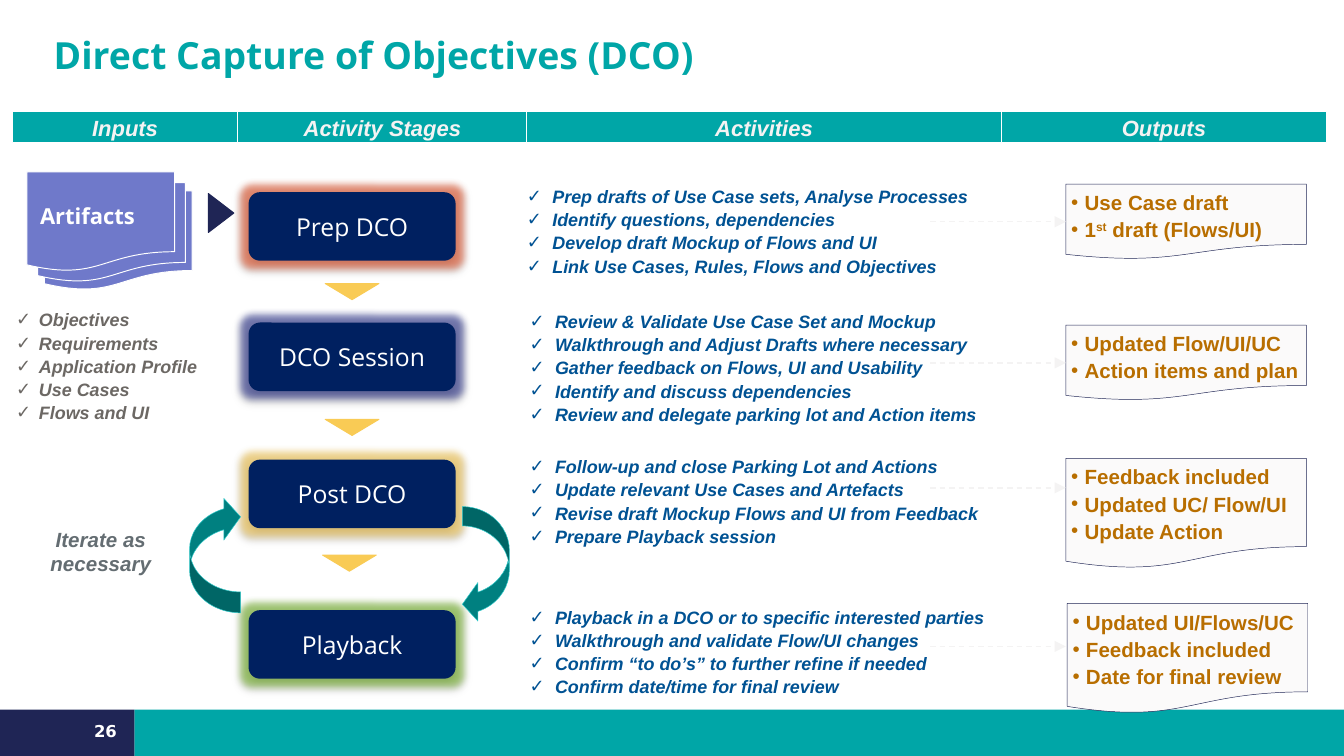
from lxml.etree import SubElement as Sub
from pptx import Presentation
from pptx.dml.color import RGBColor as RGB
from pptx.enum.dml import MSO_LINE as Dash
from pptx.enum.shapes import MSO_CONNECTOR as Link, MSO_SHAPE as Kind
from pptx.enum.text import MSO_ANCHOR as Anchor, PP_ALIGN as Align
from pptx.oxml.ns import qn
from pptx.util import Inches, Pt

TEAL = RGB(0x00, 0xA6, 0xA7)
NAVY = RGB(0x1F, 0x25, 0x55)
DEEP = RGB(0x00, 0x20, 0x60)
WHITE = RGB(0xFF, 0xFF, 0xFF)
PALE = RGB(0xF4, 0xF3, 0xF3)
PAPER = RGB(0xFB, 0xFA, 0xFA)
GOLD = RGB(0xF9, 0xCB, 0x55)
BROWN = RGB(0xB8, 0x6E, 0x00)
BLUE = RGB(0x00, 0x52, 0x93)
LILAC = RGB(0x6F, 0x79, 0xCA)
GREY = RGB(0x6C, 0x68, 0x64)
SLATE = RGB(0x64, 0x6D, 0x72)
GREEN = RGB(0x00, 0x80, 0x80)
AQUA = RGB(0x33, 0xCC, 0xCC)
RED = RGB(0xE8, 0x58, 0x30)
INK = RGB(0x30, 0x38, 0x90)
LEAF = RGB(0x7A, 0xB8, 0x30)

HEADS = [("Inputs", 0.09, 1.68), ("Activity Stages", 1.77, 2.15),
         ("Activities", 3.92, 3.53), ("Outputs", 7.45, 2.42)]
STAGES = [("Prep DCO", 1.43, RED), ("DCO Session", 2.4, INK),
          ("Post DCO", 3.42, GOLD), ("Playback", 4.54, LEAF)]
INPUTS = ["Objectives", "Requirements", "Application Profile",
          "Use Cases", "Flows and UI"]
TASKS = [
    (3.9, 1.36, ["Prep drafts of Use Case sets, Analyse Processes",
                 "Identify questions, dependencies",
                 "Develop draft Mockup of Flows and UI",
                 "Link Use Cases, Rules, Flows and Objectives"]),
    (3.92, 2.29, ["Review & Validate Use Case Set and Mockup",
                  "Walkthrough and Adjust Drafts where necessary",
                  "Gather feedback on Flows, UI and Usability",
                  "Identify and discuss dependencies",
                  "Review and delegate parking lot and Action items"]),
    (3.92, 3.37, ["Follow-up and close Parking Lot and Actions",
                  "Update relevant Use Cases and Artefacts",
                  "Revise draft Mockup Flows and UI from Feedback",
                  "Prepare Playback session"]),
    (3.92, 4.49, ["Playback in a DCO or to specific interested parties",
                  "Walkthrough and validate Flow/UI changes",
                  "Confirm “to do’s” to further refine if needed",
                  "Confirm date/time for final review"]),
]
RESULTS = [
    (7.93, 1.37, 0.56, 1.65, ["Use Case draft", "1^st^ draft (Flows/UI)"]),
    (7.93, 2.42, 0.56, 2.7, ["Updated Flow/UI/UC", "Action items and plan"]),
    (7.93, 3.41, 0.82, 3.63, ["Feedback included", "Updated UC/ Flow/UI",
                              "Update Action"]),
    (7.94, 4.49, 0.82, 4.81, ["Updated UI/Flows/UC", "Feedback included",
                              "Date for final review"]),
]


def write(shape, lines, size=9.6, color=WHITE, face="Arial", bold=True,
          slant=False, align=Align.LEFT, anchor=Anchor.TOP,
          inset=(0.02, 0.02, 0.02, 0.02), mark=None, indent=0, gap=0,
          lead=None):
    frame = shape.text_frame
    frame.word_wrap = True
    frame.vertical_anchor = anchor
    (frame.margin_left, frame.margin_top,
     frame.margin_right, frame.margin_bottom) = map(Inches, inset)
    for row, line in enumerate(lines):
        para = frame.add_paragraph() if row else frame.paragraphs[0]
        para.alignment = align
        if row:
            para.space_before = Pt(gap)
        if lead:
            para.line_spacing = lead
        if mark:
            props = para._p.get_or_add_pPr()
            props.set("marL", str(Inches(indent)))
            props.set("indent", str(-Inches(indent)))
            Sub(props, qn("a:buFont"), typeface="Arial")
            Sub(props, qn("a:buChar"), char=mark)
        for part, words in enumerate(line.split("^")):
            run = para.add_run()
            run.text = words
            font = run.font
            font.size, font.name = Pt(size), face
            font.bold, font.italic = bold, slant
            font.color.rgb = color
            if part % 2:
                font._element.set("baseline", "30000")


def draw(slide, kind, left, top, width, height, fill, line=None,
         weight=0.5, turn=0):
    shape = slide.shapes.add_shape(kind, Inches(left), Inches(top),
                                   Inches(width), Inches(height))
    shape.shadow.inherit = False
    shape.fill.solid()
    shape.fill.fore_color.rgb = fill
    if line is None:
        shape.line.fill.background()
    else:
        shape.line.color.rgb = line
        shape.line.width = Pt(weight)
    shape.rotation = turn
    return shape


def label(slide, left, top, width, height, lines, **style):
    box = slide.shapes.add_textbox(Inches(left), Inches(top),
                                   Inches(width), Inches(height))
    write(box, lines, **style)


def tint(node, color, alpha):
    hue = Sub(node, qn("a:srgbClr"), val=str(color))
    Sub(hue, qn("a:alpha"), val=str(alpha * 1000))


def stage(slide, name, top, halo):
    box = draw(slide, Kind.FLOWCHART_ALTERNATE_PROCESS, 1.85, top, 1.54, 0.51, DEEP)
    write(box, [name], size=13.2, face="Open Sans", bold=False,
          align=Align.CENTER, anchor=Anchor.MIDDLE)
    effect = box._element.spPr.find(qn("a:effectLst"))
    tint(Sub(effect, qn("a:glow"), rad=str(Pt(8))), halo, 60)
    shade = Sub(effect, qn("a:outerShdw"), blurRad=str(Pt(3.1)),
                dist=str(Pt(1.8)), dir="5400000", rotWithShape="0")
    tint(shade, "000000", 35)


def arrow(slide, level, sheet):
    line = slide.shapes.add_connector(Link.STRAIGHT, Inches(6.92), Inches(level),
                                      Inches(7.93), Inches(level))
    middle = sheet.top + sheet.height // 2
    if abs(middle - Inches(level)) < Inches(0.01):
        line.end_connect(sheet, 1)
    line.line.color.rgb = PALE
    line.line.width = Pt(0.75)
    line.line.dash_style = Dash.DASH
    Sub(line.line._get_or_add_ln(), qn("a:tailEnd"), type="triangle")
    Sub(line._element.spPr, qn("a:effectLst"))


def loop(slide, left, top, width, turn):
    curve = draw(slide, Kind.CURVED_LEFT_ARROW, left, top, width, 0.87,
                 GREEN, AQUA, 0.25, turn)
    for spot, value in enumerate((0.41, 0.82, 0.33)):
        curve.adjustments[spot] = value


def main():
    deck = Presentation()
    deck.slide_width = Inches(10)
    deck.slide_height = deck.slide_width * 9 // 16
    slide = deck.slides.add_slide(deck.slide_layouts[6])

    draw(slide, Kind.RECTANGLE, 1, 5.28, 9, 0.35, TEAL)
    draw(slide, Kind.RECTANGLE, 0, 5.28, 1, 0.35, NAVY)
    label(slide, 0.3, 5.25, 0.66, 0.3, ["26"], size=8.8, face="DejaVu Sans",
          align=Align.RIGHT, anchor=Anchor.BOTTOM, inset=(0.09, 0.04, 0.09, 0.04))
    label(slide, 0.4, 0.2, 9.2, 0.7, ["Direct Capture of Objectives (DCO)"],
          size=20, color=TEAL, face="Open Sans", anchor=Anchor.BOTTOM,
          inset=(0, 0, 0, 0.35), lead=0.9)

    for name, top, halo in STAGES:
        stage(slide, name, top, halo)
    loop(slide, 3.44, 3.77, 0.35, 0)
    loop(slide, 1.41, 3.69, 0.38, 180)
    label(slide, 0.14, 3.88, 1.22, 0.46, ["Iterate as necessary"], size=11,
          color=SLATE, slant=True, align=Align.CENTER,
          inset=(0.09, 0.04, 0.09, 0.04))
    for left, top in ((2.42, 2.11), (2.42, 3.12), (2.4, 4.13)):
        draw(slide, Kind.FLOWCHART_MERGE, left, top, 0.4, 0.12, GOLD, GOLD)
    draw(slide, Kind.FLOWCHART_MERGE, 1.5, 1.49, 0.29, 0.19, NAVY, NAVY, turn=270)

    for left, top in ((0.33, 1.42), (0.28, 1.36), (0.2, 1.28)):
        sheet = draw(slide, Kind.FLOWCHART_DOCUMENT, left, top, 1.1, 0.74,
                     LILAC, WHITE)
    write(sheet, ["Artifacts"], size=11.8, face="Open Sans",
          anchor=Anchor.MIDDLE, inset=(0.1, 0.11, 0.1, 0.05))
    label(slide, 0.1, 2.28, 1.5, 0.9, INPUTS, color=GREY, slant=True,
          mark="✓", indent=0.17, gap=0.9)

    for name, left, width in HEADS:
        head = draw(slide, Kind.RECTANGLE, left, 0.83, width, 0.23, TEAL, WHITE)
        write(head, [name], size=11.8, color=PALE, slant=True, align=Align.CENTER)
    for left, top, lines in TASKS:
        label(slide, left, top, 3.53, 0.18 * len(lines), lines, color=BLUE,
              slant=True, mark="✓", indent=0.19, gap=0.9)
    for left, top, height, level, lines in RESULTS:
        sheet = draw(slide, Kind.FLOWCHART_DOCUMENT, left, top, 1.79, height,
                     PAPER, NAVY, 0.25)
        write(sheet, lines, size=11, color=BROWN, anchor=Anchor.MIDDLE,
              inset=(0.04, 0.04, 0.02, 0.02), mark="•", indent=0.1, gap=1.3)
        arrow(slide, level, sheet)

    deck.save("out.pptx")


if __name__ == "__main__":
    main()
